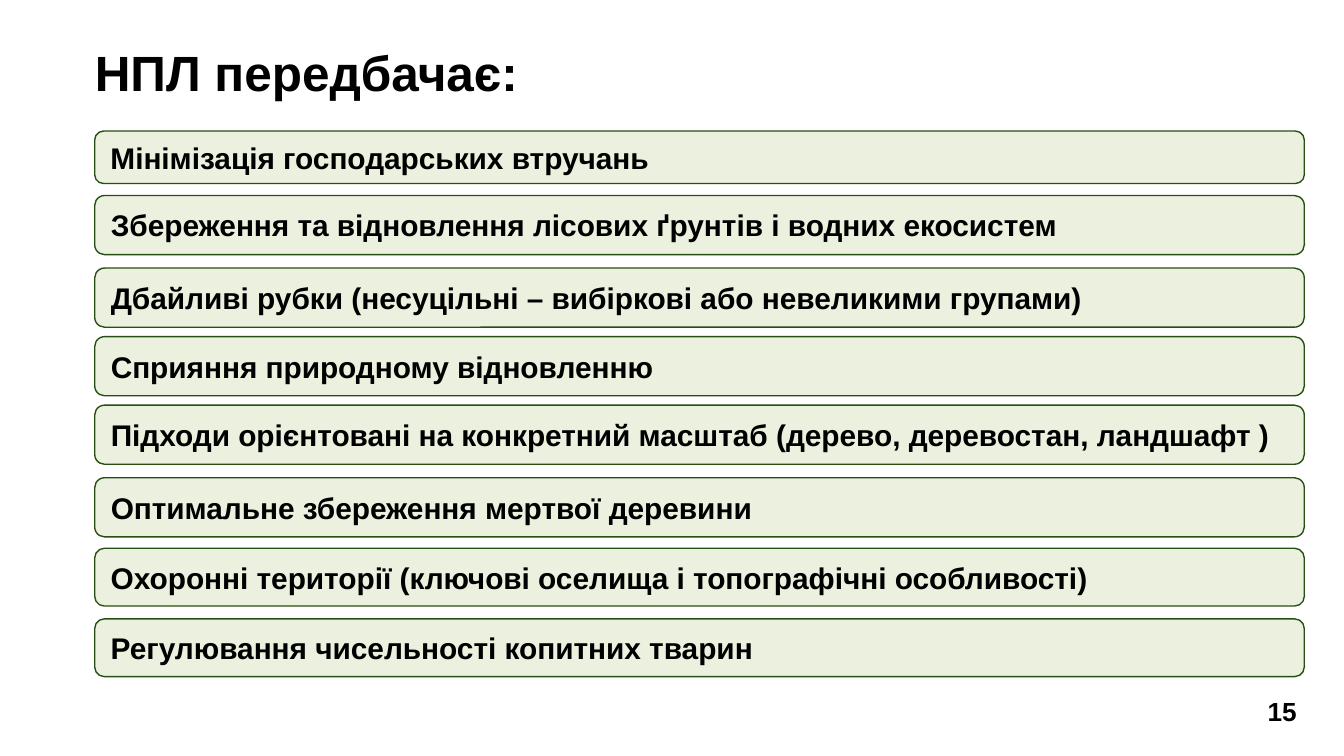
from dataclasses import dataclass

from pptx import Presentation
from pptx.dml.color import RGBColor as Rgb
from pptx.enum.shapes import MSO_SHAPE as Shape
from pptx.enum.text import MSO_ANCHOR as Anchor, MSO_AUTO_SIZE as Fit, PP_ALIGN as Align
from pptx.util import Pt

PX = 4572  # EMU in one px, 200 px to the inch


@dataclass(frozen=True)
class Theme:
    font: str = "Arial"
    ink: str = "000000"
    fill: str = "EBF1DE"
    edge: str = "274E13"
    back: str = "FFFFFF"
    head: float = 26.5
    body: float = 16
    page: float = 14


def color(code):
    return Rgb.from_string(code)


def write(frame, text, *, theme, size, align=Align.LEFT, anchor=Anchor.MIDDLE,
          pad=(20, 10), fit=Fit.NONE):
    """Put one bold line of text into a frame."""
    frame.word_wrap = True
    frame.auto_size = fit
    frame.vertical_anchor = anchor
    frame.margin_left = frame.margin_right = pad[0] * PX
    frame.margin_top = frame.margin_bottom = pad[1] * PX
    line = frame.paragraphs[0]
    line.alignment = align
    run = line.add_run()
    run.text = text
    font = run.font
    font.name, font.size, font.bold = theme.font, Pt(size), True
    font.color.rgb = color(theme.ink)


class Deck:
    def __init__(self, theme, wide, high):
        self.theme = theme
        self.file = Presentation()
        self.file.slide_width, self.file.slide_height = wide * PX, high * PX
        self.slide = self.file.slides.add_slide(self.file.slide_layouts[5])
        back = self.slide.background.fill
        back.solid()
        back.fore_color.rgb = color(theme.back)

    def title(self, text, x, y, w, h):
        box = self.slide.shapes.title
        box.left, box.top, box.width, box.height = (n * PX for n in (x, y, w, h))
        write(box.text_frame, text, theme=self.theme, size=self.theme.head,
              anchor=Anchor.TOP, pad=(0, 0), fit=Fit.SHAPE_TO_FIT_TEXT)

    def bar(self, text, x, y, w, h):
        area = (n * PX for n in (x, y, w, h))
        box = self.slide.shapes.add_shape(Shape.ROUNDED_RECTANGLE, *area)
        box.shadow.inherit = False
        box.fill.solid()
        box.fill.fore_color.rgb = color(self.theme.fill)
        box.line.color.rgb = color(self.theme.edge)
        box.line.width = Pt(0.75)
        write(box.text_frame, text, theme=self.theme, size=self.theme.body, pad=(20, 20))

    def label(self, text, x, y, w, h):
        box = self.slide.shapes.add_textbox(*(n * PX for n in (x, y, w, h)))
        write(box.text_frame, text, theme=self.theme, size=self.theme.page,
              align=Align.CENTER)


# Top, height and wording of each principle
BARS = [
    (195, 78, "Мінімізація господарських втручань"),
    (291, 88, "Збереження та відновлення лісових ґрунтів і водних екосистем"),
    (399, 88, "Дбайливі рубки (несуцільні – вибіркові або невеликими групами)"),
    (501, 88, "Сприяння природному відновленню"),
    (603, 88, "Підходи орієнтовані на конкретний масштаб (дерево, деревостан, ландшафт )"),
    (711, 88, "Оптимальне збереження мертвої деревини"),
    (816, 86, "Охоронні території (ключові оселища і топографічні особливості)"),
    (921, 86, "Регулювання чисельності копитних тварин"),
]


def main():
    deck = Deck(Theme(), 2000, 1125)

    # Title
    deck.title("НПЛ передбачає:", 141, 62, 1306, 90)

    # Principles
    for top, high, text in BARS:
        deck.bar(text, 141, top, 1800, high)

    # Page number
    deck.label("15", 1837, 1010, 142, 96)

    deck.file.save("out.pptx")


if __name__ == "__main__":
    main()
